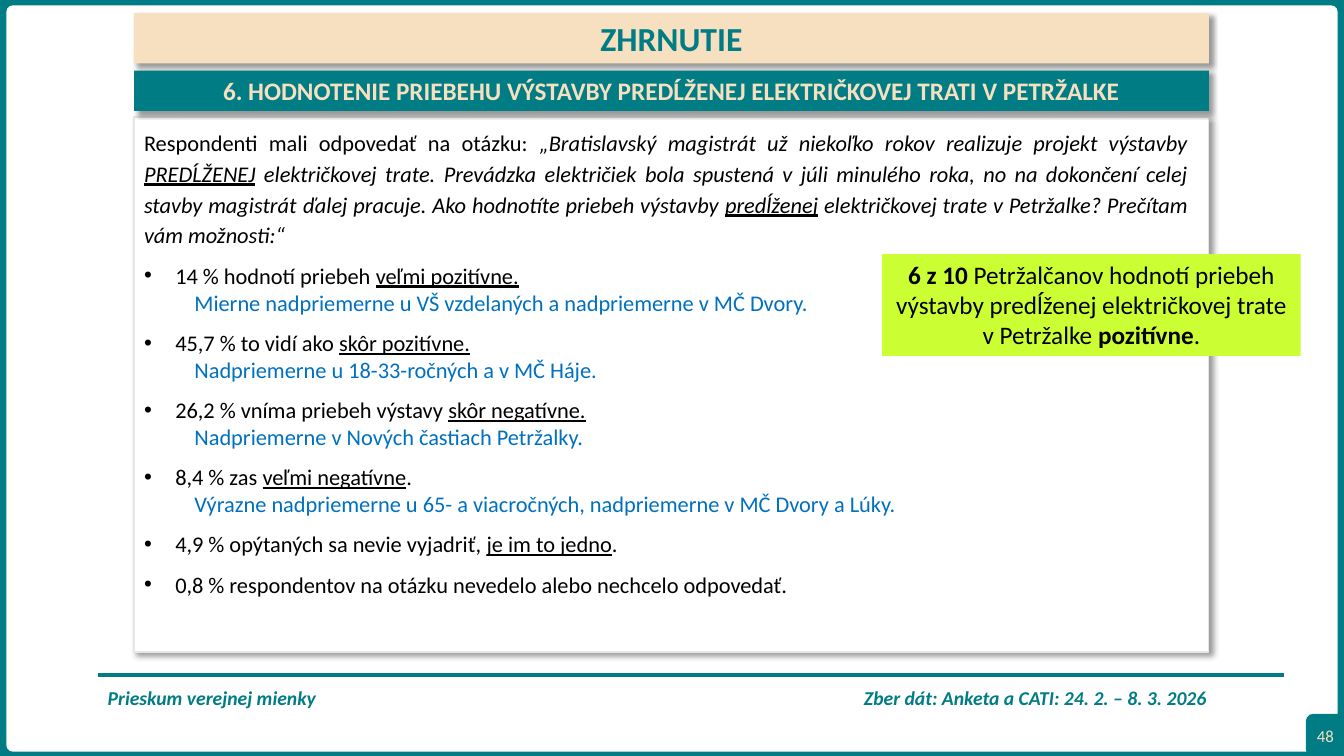
from lxml import etree
from pptx import Presentation
from pptx.dml.color import RGBColor
from pptx.enum.shapes import MSO_CONNECTOR, MSO_SHAPE
from pptx.enum.text import MSO_ANCHOR, PP_ALIGN
from pptx.oxml import parse_xml
from pptx.oxml.ns import nsdecls, qn
from pptx.util import Inches, Pt

TEAL, SAND, WHITE, BLACK = "007C85", "F6E0C0", "FFFFFF", "000000"
BLUE, LIME, GREY = "0070C0", "CCFF33", "E7E6E6"

HEADING = "ZHRNUTIE"
SUBHEADING = "6. HODNOTENIE PRIEBEHU VÝSTAVBY PREDĹŽENEJ ELEKTRIČKOVEJ TRATI V PETRŽALKE"
FOOTER = "Prieskum verejnej mienky\tZber dát: Anketa a CATI: 24. 2. – 8. 3. 2026"
PAGE = "48"
QUESTION = [
    ("Respondenti mali odpovedať na otázku: ", ""),
    ("„Bratislavský magistrát už niekoľko rokov realizuje projekt výstavby ", "i"),
    ("PREDĹŽENEJ", "iu"),
    (" električkovej trate. Prevádzka električiek bola spustená v júli minulého roka, "
     "no na dokončení celej stavby magistrát ďalej pracuje. "
     "Ako hodnotíte priebeh výstavby ", "i"),
    ("predĺženej", "iu"),
    (" električkovej trate v Petržalke? Prečítam vám možnosti:“", "i"),
]
ANSWERS = [
    ([("14 % hodnotí priebeh ", ""), ("veľmi pozitívne.", "u")],
     "Mierne nadpriemerne u VŠ vzdelaných a nadpriemerne v MČ Dvory."),
    ([("45,7 % to vidí ako ", ""), ("skôr pozitívne.", "u")],
     "Nadpriemerne u 18-33-ročných a v MČ Háje."),
    ([("26,2 % vníma priebeh výstavy ", ""), ("skôr negatívne.", "u")],
     "Nadpriemerne v Nových častiach Petržalky."),
    ([("8,4 % zas ", ""), ("veľmi negatívne", "u"), (".", "")],
     "Výrazne nadpriemerne u 65- a viacročných, nadpriemerne v MČ Dvory a Lúky."),
    ([("4,9 % opýtaných sa nevie vyjadriť, ", ""), ("je im to jedno", "u"), (".", "")], None),
    ([("0,8 % respondentov na otázku nevedelo alebo nechcelo odpovedať.", "")], None),
]
CALLOUT = [
    ("6 z 10 ", "b"),
    ("Petržalčanov hodnotí priebeh výstavby predĺženej električkovej trate v Petržalke ", ""),
    ("pozitívne", "b"),
    (".", ""),
]

prs = Presentation()
prs.slide_width, prs.slide_height = Inches(13.33), Inches(7.5)
slide = prs.slides.add_slide(prs.slide_layouts[6])


def rgb(value):
    return RGBColor.from_string(value)


def add_panel(box, fill, line=None, kind=MSO_SHAPE.RECTANGLE, raised=False):
    panel = slide.shapes.add_shape(kind, *map(Inches, box))
    panel.shadow.inherit = False
    panel.fill.solid()
    panel.fill.fore_color.rgb = rgb(fill)
    if line:
        panel.line.color.rgb = rgb(line)
        panel.line.width = Pt(1)
    else:
        panel.line.fill.background()
    if raised:
        effects = panel._element.spPr.find(qn("a:effectLst"))
        effects.append(parse_xml(
            f'<a:outerShdw {nsdecls("a")} blurRad="50800" dist="38100" dir="2700000" '
            'algn="tl" rotWithShape="0"><a:srgbClr val="000000">'
            '<a:alpha val="40000"/></a:srgbClr></a:outerShdw>'))
    panel.text_frame.vertical_anchor = MSO_ANCHOR.TOP
    return panel


def add_text_area(box):
    frame = slide.shapes.add_textbox(*map(Inches, box)).text_frame
    frame.word_wrap = True
    return frame


def write(paragraph, parts, size, color, align, spacing=1.0):
    paragraph.alignment = align
    paragraph.line_spacing = spacing
    for words, style in parts:
        run = paragraph.add_run()
        run.text = words
        font = run.font
        font.name, font.size = "Calibri", Pt(size)
        font.color.rgb = rgb(color)
        font.bold, font.italic, font.underline = (mark in style for mark in "biu")


def indent(paragraph, left, first=0, bullet=False):
    props = paragraph._p.get_or_add_pPr()
    props.set("marL", str(Inches(left)))
    props.set("indent", str(Inches(first)))
    if bullet:
        etree.SubElement(props, qn("a:buFont")).set("typeface", "Arial")
        etree.SubElement(props, qn("a:buChar")).set("char", "•")


add_panel((0, 0, 13.33, 7.5), TEAL, TEAL)
page_area = add_panel((0.07, 0.06, 13.19, 7.39), WHITE, WHITE, MSO_SHAPE.ROUNDED_RECTANGLE)
page_area.adjustments[0] = 0.008

footer = add_text_area((0.97, 6.82, 11.77, 0.44)).paragraphs[0]
tabs = etree.SubElement(footer._p.get_or_add_pPr(), qn("a:tabLst"))
tab = etree.SubElement(tabs, qn("a:tab"))
tab.set("pos", str(Inches(7.5)))
tab.set("algn", "l")
write(footer, [(FOOTER, "bi")], 14, TEAL, PP_ALIGN.LEFT, 0.7)

page_tab = add_panel((12.96, 7.09, 0.37, 0.41), TEAL, TEAL, MSO_SHAPE.ROUNDED_RECTANGLE).text_frame
page_tab.margin_left = page_tab.margin_right = 0
page_tab.vertical_anchor = MSO_ANCHOR.MIDDLE
page_tab.word_wrap = False
write(page_tab.paragraphs[0], [(PAGE, "")], 12, SAND, PP_ALIGN.CENTER)

rule = slide.shapes.add_connector(
    MSO_CONNECTOR.STRAIGHT, Inches(0.97), Inches(6.7), Inches(12.73), Inches(6.7))
rule.line.color.rgb = rgb(TEAL)
rule.line.width = Pt(3)
etree.SubElement(rule._element.spPr, qn("a:effectLst"))

add_panel((1.33, 1.16, 10.66, 5.31), WHITE, GREY, raised=True)
for words, top, height, fill, size, color in [
    (HEADING, 0.13, 0.5, SAND, 24, TEAL),
    (SUBHEADING, 0.7, 0.4, TEAL, 18, SAND),
]:
    band = add_panel((1.33, top, 10.66, height), fill, raised=True)
    write(band.text_frame.paragraphs[0], [(words, "b")], size, color, PP_ALIGN.CENTER)

findings = add_text_area((1.33, 1.19, 10.55, 5.27))
write(findings.paragraphs[0], QUESTION, 16, BLACK, PP_ALIGN.JUSTIFY, 1.15)
for answer, detail in ANSWERS:
    point = findings.add_paragraph()
    indent(point, 0.31, -0.31, bullet=True)
    write(point, answer, 16, BLACK, PP_ALIGN.JUSTIFY, 1.5)
    if detail:
        remark = findings.add_paragraph()
        indent(remark, 0.5)
        write(remark, [(detail, "")], 16, BLUE, PP_ALIGN.JUSTIFY)

callout = add_panel((8.75, 2.52, 4.15, 1.01), LIME)
write(callout.text_frame.paragraphs[0], CALLOUT, 18, BLACK, PP_ALIGN.CENTER)

prs.save("out.pptx")
